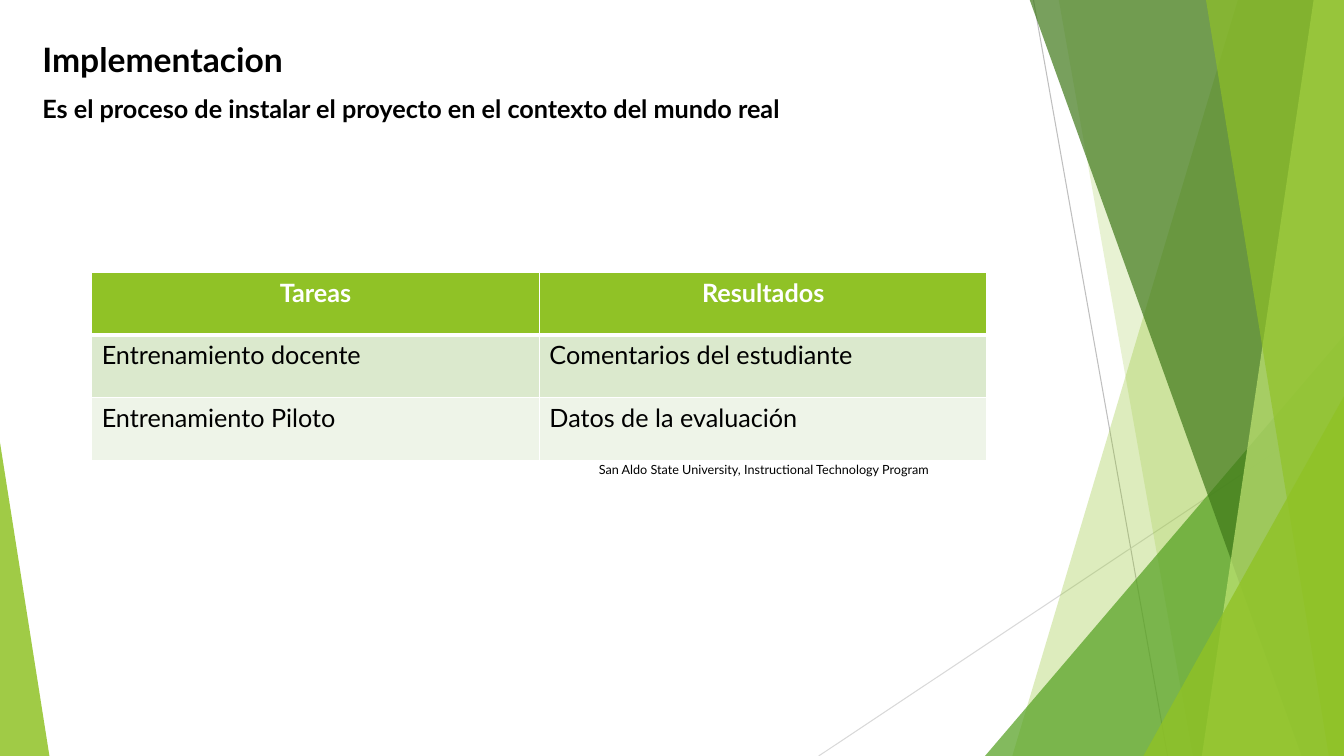
from lxml import etree
from pptx import Presentation, util as u
from pptx.dml.color import RGBColor
from pptx.enum import shapes, text
from pptx.oxml.ns import qn

WIDE, TALL, TOP = 13.33, 7.5, -0.01
LIME, WHITE, BLACK = "90C226", "FFFFFF", "000000"


def color(code):
    return RGBColor.from_string(code)


class Deck:
    """Holds the style and the current slide, and draws each kind of element."""

    font = "Lato"

    def __init__(self):
        self.prs = Presentation()
        self.prs.slide_width = u.Inches(WIDE)
        self.prs.slide_height = u.Inches(TALL)
        self.slide = self.prs.slides.add_slide(self.prs.slide_layouts[1])
        self.items = self.slide.shapes
        title = self.items.title.element
        title.getparent().remove(title)

    def label(self, para, words, size, tint=BLACK, bold=False):
        para.text = words
        para.font.name, para.font.size = self.font, u.Pt(size)
        para.font.bold, para.font.color.rgb = bold, color(tint)

    def paint(self, shape, tint, alpha):
        shape.shadow.inherit = False
        shape.line.fill.background()
        shape.fill.solid()
        shape.fill.fore_color.rgb = color(tint)
        node = shape.element.spPr.find(".//" + qn("a:srgbClr"))
        etree.SubElement(node, qn("a:alpha"), val=str(alpha * 1000))

    def line(self, ends, tint):
        rule = self.items.add_connector(
            shapes.MSO_CONNECTOR.STRAIGHT, *map(u.Inches, ends))
        rule.line.color.rgb, rule.line.width = color(tint), u.Pt(0.75)
        etree.SubElement(rule.element.spPr, qn("a:effectLst"))

    def blade(self, left, right, foot, tint, alpha):
        pen = self.items.build_freeform(
            u.Inches(left), u.Inches(TOP), scale=1.0)
        pen.add_line_segments(
            [(u.Inches(x), u.Inches(y)) for x, y in
             ((right, TOP), (right, TALL), (foot, TALL))])
        self.paint(pen.convert_to_shape(), tint, alpha)

    def wedge(self, left, top, width, tip, tint, alpha):
        box = map(u.Inches, (left, top, width, TALL - top))
        shape = self.items.add_shape(
            shapes.MSO_SHAPE.ISOSCELES_TRIANGLE, *box)
        shape.adjustments[0] = tip
        self.paint(shape, tint, alpha)

    def body(self, box, lines):
        hold = self.slide.placeholders[1]
        hold.left, hold.top, hold.width, hold.height = map(u.Inches, box)
        hold.element.getparent().append(hold.element)
        frame = hold.text_frame
        frame.auto_size = text.MSO_AUTO_SIZE.NONE
        frame.vertical_anchor = text.MSO_ANCHOR.TOP
        for i, (words, size) in enumerate(lines):
            para = frame.add_paragraph() if i else frame.paragraphs[0]
            self.label(para, words, size, bold=True)
            para.space_before = u.Pt(10)
            props = para._p.get_or_add_pPr()
            props.set("marL", "0")
            props.set("indent", "0")
            bullet = etree.Element(qn("a:buNone"))
            props.find(qn("a:defRPr")).addprevious(bullet)

    def edge(self, cell, foot):
        props = cell._tc.get_or_add_tcPr()
        for i, side in enumerate("LRTB"):
            width = u.Pt(foot if side == "B" else 1)
            rim = etree.Element(qn("a:ln" + side), w=str(int(width)))
            fill = etree.SubElement(rim, qn("a:solidFill"))
            etree.SubElement(fill, qn("a:srgbClr"), val=WHITE)
            props.insert(i, rim)

    def table(self, box, rows, fills):
        grid = self.items.add_table(
            len(rows), len(rows[0]), *map(u.Inches, box)).table
        for r, row in enumerate(rows):
            head = r == 0
            for c, words in enumerate(row):
                cell = grid.cell(r, c)
                cell.fill.solid()
                cell.fill.fore_color.rgb = color(fills[r])
                self.edge(cell, 3 if head else 1)
                para = cell.text_frame.paragraphs[0]
                self.label(para, words, 18, WHITE if head else BLACK, head)
                if head:
                    para.alignment = text.PP_ALIGN.CENTER

    def note(self, box, words, size):
        frame = self.items.add_textbox(*map(u.Inches, box)).text_frame
        frame.word_wrap = True
        frame.auto_size = text.MSO_AUTO_SIZE.SHAPE_TO_FIT_TEXT
        self.label(frame.paragraphs[0], words, size)


def main():
    deck = Deck()
    deck.line((10.25, 0, 11.58, TALL), "BFBFBF")
    deck.line((WIDE, 4.03, 8.12, TALL), "D9D9D9")
    deck.blade(12.28, WIDE, 10.04, LIME, 30)
    deck.blade(10.5, WIDE, 11.83, LIME, 20)
    deck.wedge(9.77, 3.33, 3.56, 1, "54A021", 72)
    deck.blade(10.21, WIDE, 12.91, "3F7819", 70)
    deck.blade(13.03, WIDE, 11.92, "C0E474", 70)
    deck.blade(11.96, WIDE, 13.18, LIME, 65)
    deck.wedge(11.34, 3.93, 1.99, 1, LIME, 80)
    deck.wedge(0, 4.39, 0.49, 0, LIME, 85)
    deck.body((0.32, 0.34, 11.33, 0.63), [
        ("Implementacion", 24),
        ("Es el proceso de instalar el proyecto en el contexto "
         "del mundo real", 18)])
    deck.table((0.91, 2.7, 8.88, 1.87), [
        ("Tareas", "Resultados"),
        ("Entrenamiento docente", "Comentarios del estudiante"),
        ("Entrenamiento Piloto", "Datos de la evaluación")],
        (LIME, "DBE9CD", "EEF4E8"))
    deck.note((5.84, 4.53, 4.21, 0.25),
              "San Aldo State University, Instructional Technology Program", 9)
    deck.prs.save("out.pptx")


if __name__ == "__main__":
    main()
